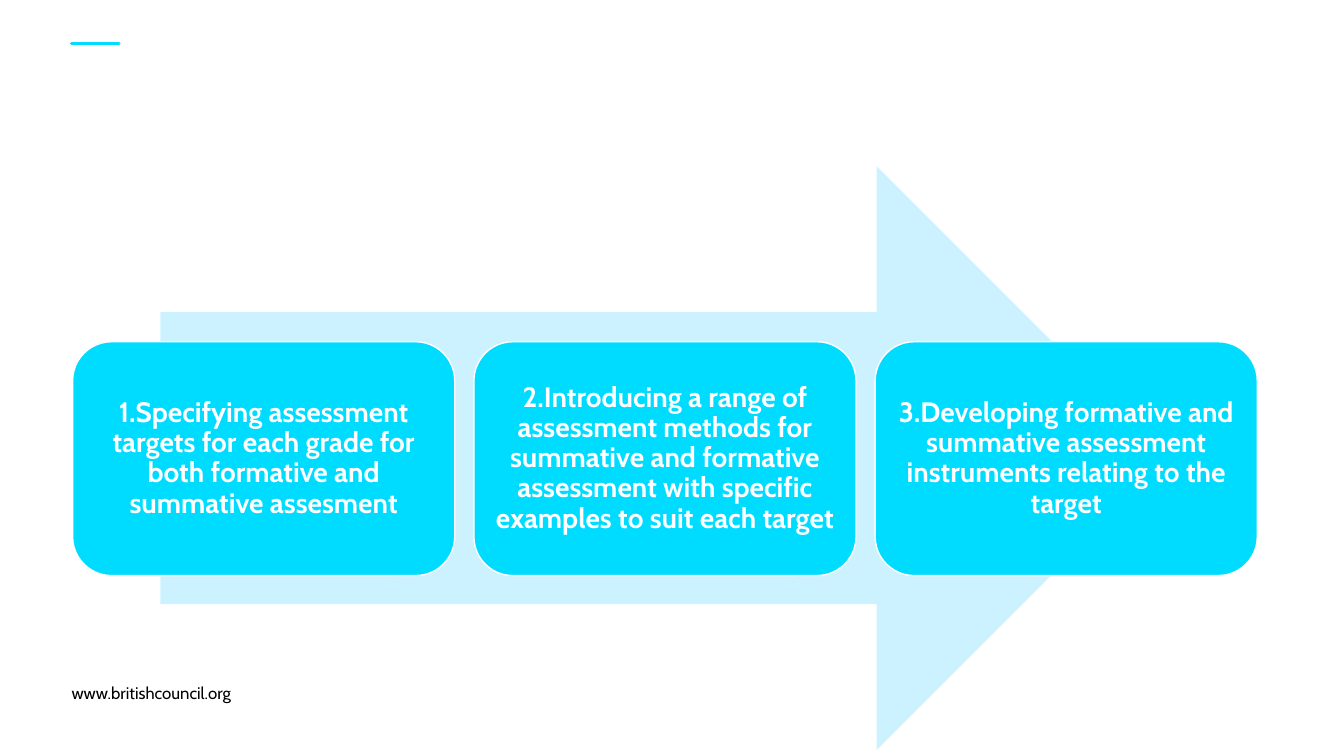
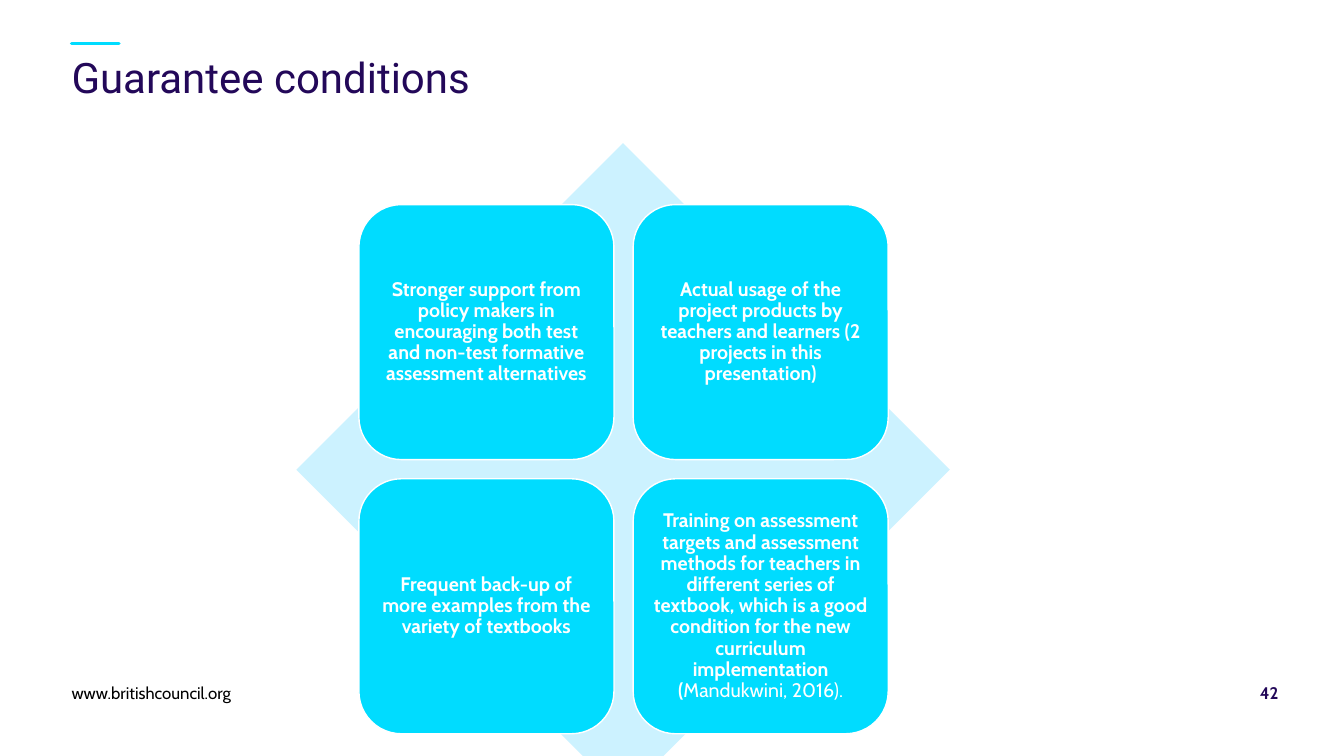
from lxml.etree import SubElement
from pptx import Presentation
from pptx.dml.color import RGBColor
from pptx.enum.shapes import MSO_CONNECTOR, MSO_SHAPE
from pptx.enum.text import MSO_ANCHOR, PP_ALIGN
from pptx.oxml.ns import qn
from pptx.util import Inches, Pt

CYAN = RGBColor(0x00, 0xDC, 0xFF)
PALE = RGBColor(0xCC, 0xF2, 0xFF)
WHITE = RGBColor(0xFF, 0xFF, 0xFF)
BLACK = RGBColor(0x00, 0x00, 0x00)
INDIGO = RGBColor(0x23, 0x08, 0x59)
BODY_FONT = "Cabin"
TITLE_FONT = "Roboto"
MARGIN = 0.71
FOOTER_TOP = 6.77
FOOTER_HEIGHT = 0.2

FOOTER = "www.britishcouncil.org"
SLIDES = [
    {
        "backdrop": (MSO_SHAPE.RIGHT_ARROW, 1.59, 1.65, 10, 5.79),
        "grid": {"left": 0.72, "top": 3.39, "width": 3.79, "height": 2.32,
                 "gap": 0.19, "columns": 3, "inset": 0.08, "size": 20},
        "cards": [
            ("1.Specifying assessment targets for each grade for both formative "
             "and summative assesment",),
            ("2.Introducing a range of assessment methods for summative and "
             "formative assessment with specific examples to suit each target",),
            ("3.Developing formative and summative assessment instruments "
             "relating to the target",),
        ],
    },
    {
        "title": "Guarantee conditions",
        "number": "42",
        "backdrop": (MSO_SHAPE.DIAMOND, 2.94, 1.42, 6.48, 6.48),
        "grid": {"left": 3.56, "top": 2.03, "width": 2.53, "height": 2.53,
                 "gap": 0.19, "columns": 2, "inset": 0.06, "size": 14},
        "cards": [
            ("Stronger support from policy makers in encouraging both test and "
             "non-test formative assessment alternatives",),
            ("Actual usage of the project products by teachers and learners "
             "(2 projects in this presentation)",),
            ("Frequent back-up of more examples from the variety of textbooks",),
            ("Training on assessment targets and assessment methods for teachers "
             "in different series of textbook, which is a good condition for the "
             "new curriculum implementation (", "Mandukwini, 2016)."),
        ],
    },
]


def set_font(font, name, size, color):
    font.name = name
    font.size = Pt(size)
    font.color.rgb = color


def prepare_frame(frame, inset, anchor):
    frame.word_wrap = True
    frame.vertical_anchor = anchor
    frame.margin_left = frame.margin_right = Inches(inset)
    frame.margin_top = frame.margin_bottom = Inches(inset)


def add_label(page, text, area, font_name, size, color, anchor=MSO_ANCHOR.BOTTOM):
    box = page.shapes.add_textbox(*map(Inches, area))
    prepare_frame(box.text_frame, 0, anchor)
    para = box.text_frame.paragraphs[0]
    para.text = text
    set_font(para.font, font_name, size, color)
    return para


def add_block(page, kind, area, fill):
    block = page.shapes.add_shape(kind, *map(Inches, area))
    block.shadow.inherit = False
    block.fill.solid()
    block.fill.fore_color.rgb = fill
    block.line.fill.background()
    return block


def add_card(page, texts, area, inset, size):
    card = add_block(page, MSO_SHAPE.ROUNDED_RECTANGLE, area, CYAN)
    card.line.color.rgb = WHITE
    card.line.width = Pt(1)
    prepare_frame(card.text_frame, inset, MSO_ANCHOR.MIDDLE)
    para = card.text_frame.paragraphs[0]
    para.alignment = PP_ALIGN.CENTER
    para.line_spacing = 0.9
    set_font(para.font, BODY_FONT, size, WHITE)
    for position, text in enumerate(texts):
        span = para.add_run()
        span.text = text
        span.font.bold = position == 0


def add_cards(page, cards, grid):
    width, height = grid["width"], grid["height"]
    for index, texts in enumerate(cards):
        row, column = divmod(index, grid["columns"])
        left = grid["left"] + column * (width + grid["gap"])
        top = grid["top"] + row * (height + grid["gap"])
        add_card(page, texts, (left, top, width, height), grid["inset"], grid["size"])


def add_accent(page):
    accent = page.shapes.add_connector(
        MSO_CONNECTOR.STRAIGHT,
        Inches(MARGIN), Inches(0.43), Inches(1.18), Inches(0.43))
    accent.line.color.rgb = CYAN
    accent.line.width = Pt(2.4)
    properties = accent.element.find(qn("p:spPr"))
    properties.find(qn("a:ln")).set("cap", "rnd")
    SubElement(properties, qn("a:effectLst"))


def build_page(deck, content):
    page = deck.slides.add_slide(deck.slide_layouts[6])
    add_accent(page)
    if "title" in content:
        title = add_label(page, content["title"], (MARGIN, 0.55, 11.97, 0.87),
                          TITLE_FONT, 30, INDIGO, MSO_ANCHOR.TOP)
        title.line_spacing = Pt(33)
    kind, *area = content["backdrop"]
    add_block(page, kind, area, PALE)
    add_cards(page, content["cards"], content["grid"])
    add_label(page, FOOTER, (MARGIN, FOOTER_TOP, 11.42, FOOTER_HEIGHT),
              BODY_FONT, 12, BLACK)
    if "number" in content:
        number = add_label(page, content["number"],
                           (12.13, FOOTER_TOP, 0.55, FOOTER_HEIGHT),
                           BODY_FONT, 12, INDIGO)
        number.alignment = PP_ALIGN.RIGHT
        number.font.bold = True


def main():
    deck = Presentation()
    deck.slide_width = Inches(13.33)
    deck.slide_height = Inches(7.5)
    for content in SLIDES:
        build_page(deck, content)
    deck.save("out.pptx")


if __name__ == "__main__":
    main()
